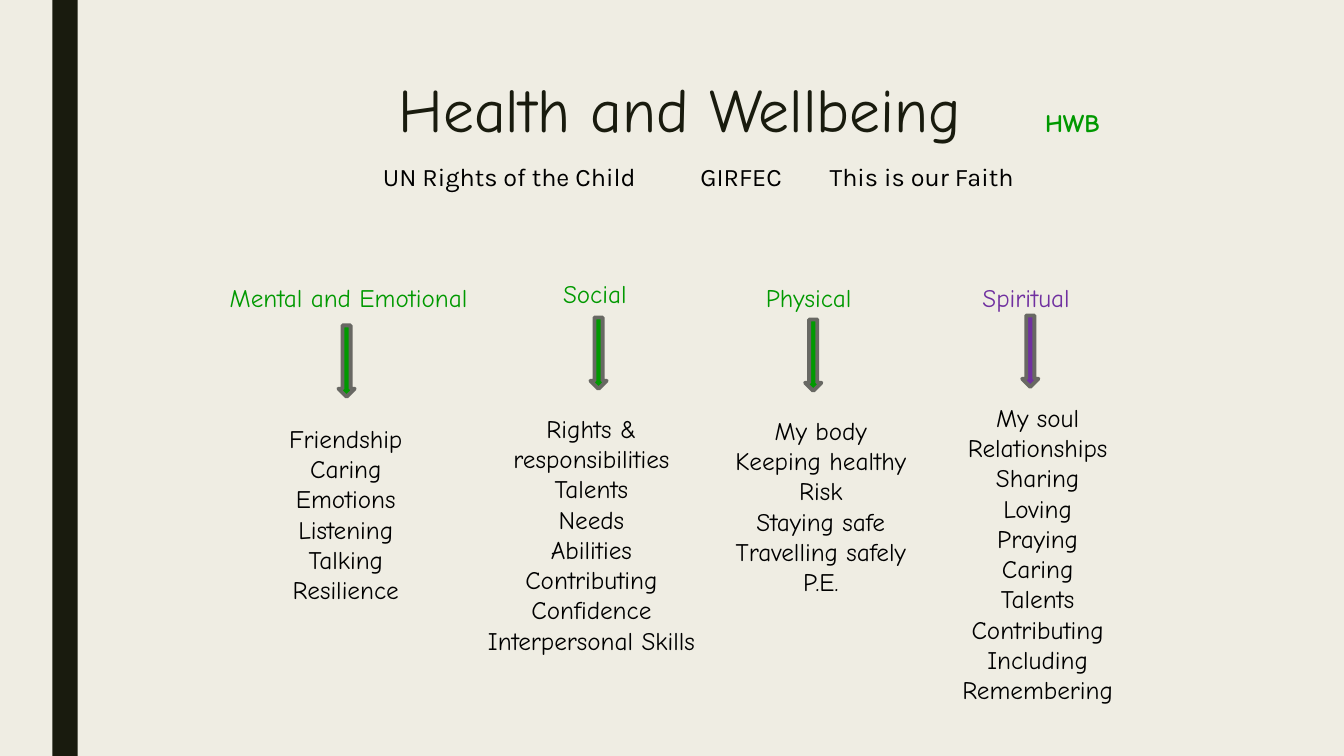
import pptx
import pptx.dml.color
import pptx.enum.shapes
import pptx.enum.text
import pptx.oxml
import pptx.oxml.ns
import pptx.util
from dataclasses import dataclass

Cm = pptx.util.Cm
Pt = pptx.util.Pt
Shape = pptx.enum.shapes.MSO_SHAPE
Align = pptx.enum.text.PP_ALIGN


@dataclass(frozen=True)
class Theme:
    paper: str = "EFEDE3"
    dark: str = "191B0E"
    black: str = "000000"
    green: str = "009900"
    purple: str = "7030A0"
    edge: str = "686863"
    hand: str = "Comic Neue"
    plain: str = "Karla"
    title: int = 44
    body: int = 18


def tint(code):
    return pptx.dml.color.RGBColor.from_string(code)


class Board:
    def __init__(self, slide, theme):
        self.slide = slide
        self.theme = theme
        back = slide.background.fill
        back.solid()
        back.fore_color.rgb = tint(theme.paper)

    def shape(self, kind, box, fill, edge=None):
        item = self.slide.shapes.add_shape(kind, *map(Cm, box))
        item.shadow.inherit = False
        item.fill.solid()
        item.fill.fore_color.rgb = tint(fill)
        if edge:
            item.line.color.rgb = tint(edge)
            item.line.width = Pt(2.75)
        else:
            item.line.fill.background()

    def text(self, box, lines, color, size=None, font=None,
             align=Align.CENTER, bold=False, space=None, tabs=()):
        """Write one paragraph per line; tabs are stops in cm."""
        frame = self.slide.shapes.add_textbox(*map(Cm, box)).text_frame
        frame.word_wrap = True
        frame.text = "\n".join(lines)
        for para in frame.paragraphs:
            para.alignment = align
            if space:
                para.line_spacing = space
            if tabs:
                self.stops(para, tabs)
            para.font.name = font or self.theme.hand
            para.font.size = Pt(size or self.theme.body)
            para.font.bold = bold
            para.font.color.rgb = tint(color)

    def stops(self, para, tabs):
        props = para._p.get_or_add_pPr()
        group = pptx.oxml.parse_xml(
            f"<a:tabLst {pptx.oxml.ns.nsdecls('a')}>"
            + "".join(f'<a:tab pos="{Cm(x)}" algn="l"/>' for x in tabs)
            + "</a:tabLst>")
        props.append(group)

    def strand(self, name, head, arrow, topics, color, words):
        """Draw a heading, its arrow and its topics; head and arrow are corners."""
        self.text((*head, 1.02), [name], color, align=Align.LEFT)
        self.shape(Shape.DOWN_ARROW, (*arrow, 0.41, 1.8), color, self.theme.edge)
        self.text(topics, words, self.theme.black)


def main():
    deck = pptx.Presentation()
    deck.slide_width, deck.slide_height = Cm(33.87), Cm(19.05)
    theme = Theme()
    board = Board(deck.slides.add_slide(deck.slide_layouts[6]), theme)

    board.shape(Shape.RECTANGLE, (1.32, 0, 0.64, 19.05), theme.dark)
    board.text((3.81, 1.9, 26.67, 4.11), ["Health and Wellbeing"],
               theme.dark, size=theme.title, space=0.89)
    board.text((25.22, 2.57, 3.61, 1.02), ["HWB"], theme.green, bold=True)
    board.text((9.4, 3.94, 16.61, 1.02),
               ["UN Rights of the Child\tGIRFEC\tThis is our Faith"],
               theme.black, font=theme.plain, align=Align.LEFT, tabs=(8, 11.26))

    strands = [
        ("Mental and Emotional", (5.54, 6.98, 7.8), (8.53, 8.2),
         (5.82, 10.54, 5.79, 4.88), theme.green,
         ["Friendship", "Caring", "Emotions", "Listening", "Talking",
          "Resilience"]),
        ("Social", (13.94, 6.88, 2.31), (14.88, 8),
         (11.63, 10.29, 6.55, 6.4), theme.green,
         ["Rights & responsibilities", "Talents", "Needs", "Abilities",
          "Contributing", "Confidence", "Interpersonal Skills"]),
        ("Physical", (19.05, 6.98, 2.87), (20.29, 8.05),
         (18.08, 10.34, 5.21, 5.64), theme.green,
         ["My body", "Keeping healthy", "Risk", "Staying safe",
          "Travelling safely", "P.E."]),
        ("Spiritual", (24.51, 6.98, 3.48), (25.76, 7.95),
         (23.85, 10.01, 4.6, 8.71), theme.purple,
         ["My soul", "Relationships", "Sharing", "Loving", "Praying",
          "Caring", "Talents", "Contributing", "Including", "Remembering"]),
    ]
    for strand in strands:
        board.strand(*strand)

    deck.save("out.pptx")


if __name__ == "__main__":
    main()
